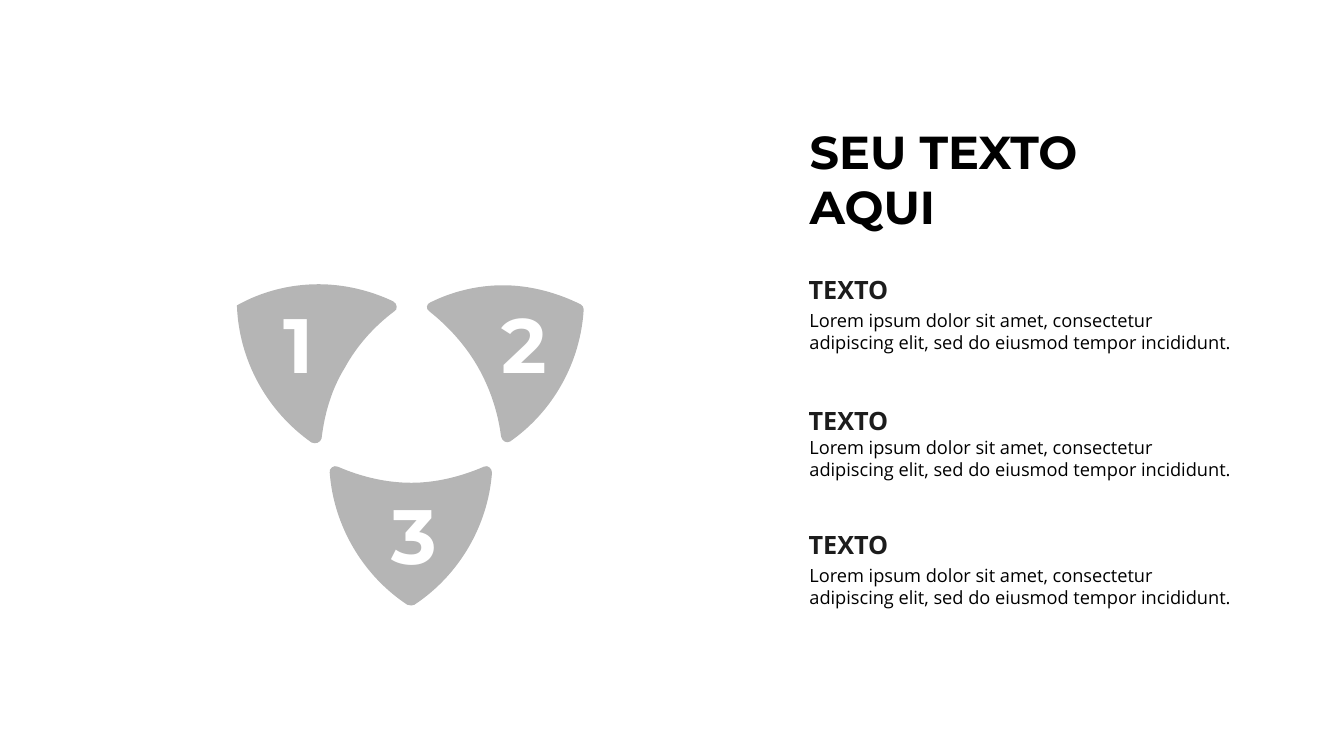
import pptx
import pptx.util
import pptx.dml.color
import pptx.enum.text
import pptx.oxml.ns
import lxml.etree

PX = 9144
LOREM = ("Lorem ipsum dolor sit amet, consectetur "
         "adipiscing elit, sed do eiusmod tempor incididunt.")
PETALS = [
    ("3", (326, 461), (62, 23), (59, 111), (85, 139), [
        (129, 110, 158, 61, 162, 8), (162, 4, 158, 0, 154, 2),
        (131, 12, 106, 18, 82, 18), (57, 18, 32, 12, 9, 2),
        (5, 0, 0, 4, 1, 8), (5, 61, 34, 110, 78, 139),
        (81, 140, 83, 140, 85, 139)]),
    ("1", (235, 282), (46, 12), (59, 112), (74, 157), [
        (78, 159, 83, 157, 84, 153), (87, 128, 94, 104, 107, 83),
        (119, 61, 136, 42, 156, 27), (160, 25, 159, 19, 155, 17),
        (132, 6, 106, 0, 81, 0), (53, 0, 25, 7, 0, 21),
        (2, 76, 30, 126, 74, 157)]),
    ("2", (422, 283), (75, 11), (51, 93), (5, 17), [
        (1, 18, 0, 24, 4, 26), (23, 41, 40, 60, 52, 81),
        (64, 102, 72, 126, 75, 150), (76, 155, 81, 157, 84, 155),
        (127, 125, 154, 76, 157, 24), (157, 22, 156, 20, 154, 19),
        (130, 7, 103, 0, 77, 0), (52, 0, 27, 6, 5, 17)]),
]


def color(code):
    return pptx.dml.color.RGBColor.from_string(code)


def tag(name):
    return pptx.oxml.ns.qn("a:" + name)


def label(slide, box, text, face, size, ink, bold=True, pad=(0, 0),
          anchor="TOP"):
    shape = slide.shapes.add_textbox(*[n * PX for n in box])
    frame = shape.text_frame
    frame.word_wrap = True
    frame.margin_left = frame.margin_right = pad[0] * PX
    frame.margin_top = frame.margin_bottom = pad[1] * PX
    frame.vertical_anchor = getattr(pptx.enum.text.MSO_ANCHOR, anchor)
    para = frame.paragraphs[0]
    para.text = text
    para.font.name = face
    para.font.size = pptx.util.Pt(size)
    para.font.bold = bold
    para.font.color.rgb = color(ink)


def bend(shape, spot, parts):
    lines = shape.element.findall(".//" + tag("lnTo"))
    for line, part in zip(lines, parts):
        arc = lxml.etree.Element(tag("cubicBezTo"))
        for x, y in zip(part[::2], part[1::2]):
            lxml.etree.SubElement(
                arc, tag("pt"),
                x=str((spot[0] + x) * PX - shape.left),
                y=str((spot[1] + y) * PX - shape.top))
        line.getparent().replace(line, arc)


def petal(slide, spot, start, parts):
    left, top = spot
    points = [((left + x) * PX, (top + y) * PX)
              for x, y in [start] + [part[4:] for part in parts]]
    form = slide.shapes.build_freeform(*points[0])
    form.add_line_segments(points[1:], close=True)
    shape = form.convert_to_shape()
    bend(shape, spot, parts)
    shape.shadow.inherit = False
    shape.line.fill.background()
    shape.fill.solid()
    shape.fill.fore_color.rgb = color("000000")
    ink = shape.element.spPr.find(tag("solidFill") + "/" + tag("srgbClr"))
    lxml.etree.SubElement(ink, tag("alpha"), val="29000")


def wheel(slide, left, top):
    for num, (x, y), shift, size, start, parts in PETALS:
        spot = left + x, top + y
        petal(slide, spot, start, parts)
        label(slide, (spot[0] + shift[0], spot[1] + shift[1], *size), num,
              "Montserrat", 55, "FFFFFF")


def entry(slide, left, top, gap):
    label(slide, (left, top, 181, 31), "TEXTO", "Open Sans", 18, "1C1C1C",
          anchor="MIDDLE")
    label(slide, (left - 9, top + gap, 443, 54), LOREM, "Open Sans", 13,
          "000000", bold=False, pad=(10, 5))


def panel(slide, left, top):
    label(slide, (left + 1, top, 323, 111), "SEU TEXTO AQUI",
          "Montserrat", 33, "000000")
    for drop, gap in ((150, 30), (280, 26), (403, 30)):
        entry(slide, left, top + drop, gap)


def main():
    deck = pptx.Presentation()
    deck.slide_width = 1333 * PX
    deck.slide_height = 750 * PX
    slide = deck.slides.add_slide(deck.slide_layouts[6])
    wheel(slide, 0, 0)
    panel(slide, 802, 122)
    deck.save("out.pptx")


if __name__ == "__main__":
    main()
